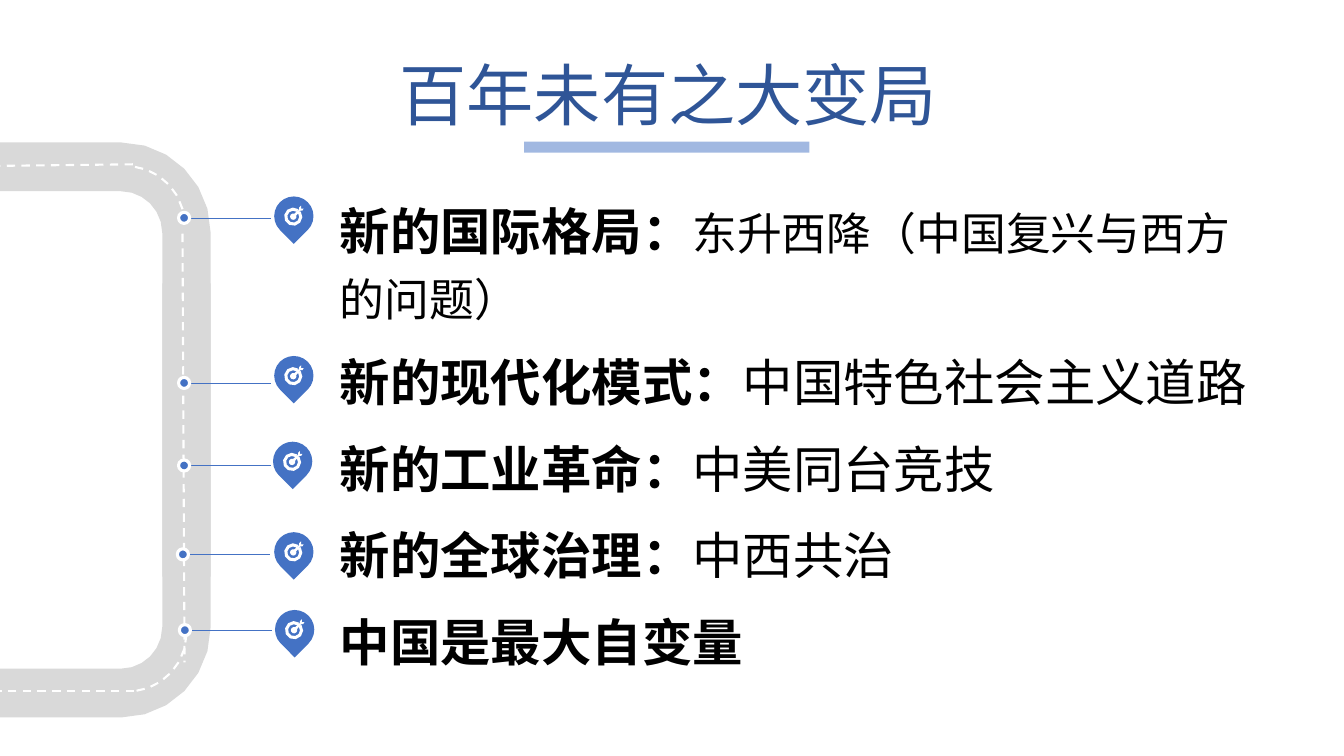
from math import cos, radians, sin

from lxml.etree import SubElement
from pptx import Presentation
from pptx.dml.color import RGBColor
from pptx.enum.dml import MSO_LINE
from pptx.enum.shapes import MSO_CONNECTOR, MSO_SHAPE
from pptx.enum.text import MSO_ANCHOR, PP_ALIGN
from pptx.oxml.ns import qn
from pptx.util import Cm, Pt

BLUE = RGBColor(0x44, 0x72, 0xC4)
NAVY = RGBColor(0x2F, 0x55, 0x97)
GREY = RGBColor(0xD9, 0xD9, 0xD9)
WHITE = RGBColor(0xFF, 0xFF, 0xFF)
BLACK = RGBColor(0x00, 0x00, 0x00)

TITLE = "百年未有之大变局"
POINTS = [
    [("新的国际格局：", 36, True), ("东升西降（中国复兴与西方的问题）", 32, False)],
    [("新的现代化模式：", 36, True), ("中国特色社会主义道路", 36, False)],
    [("新的工业革命：", 36, True), ("中美同台竞技", 36, False)],
    [("新的全球治理：", 36, True), ("中西共治", 36, False)],
    [("中国是最大自变量", 36, True)],
]
PINS = [(6.91, 4.95), (6.91, 8.97), (6.88, 11.13), (6.91, 13.41), (6.93, 15.37)]
STOPS = [(4.64, 5.49), (4.64, 9.65), (4.64, 11.73), (4.61, 13.97), (4.66, 15.88)]
ROAD_MIRROR = 21.67


def bezier(start, control_a, control_b, end, steps=6):
    """Return points along a cubic curve."""
    return [
        tuple(
            (1 - t) ** 3 * a + 3 * (1 - t) ** 2 * t * b + 3 * (1 - t) * t ** 2 * c + t ** 3 * d
            for a, b, c, d in zip(start, control_a, control_b, end)
        )
        for t in (step / steps for step in range(steps + 1))
    ]


def arc(center, radius, first, last, steps=9):
    """Return points along a circle between two angles in degrees."""
    angles = [radians(first + (last - first) * step / steps) for step in range(steps + 1)]
    return [(center[0] + radius * cos(a), center[1] - radius * sin(a)) for a in angles]


class RoadSlide:
    """Hold the style and the current slide, and draw elements in centimetres."""

    font = "Noto Sans CJK SC"

    def __init__(self, page):
        self.shapes = page.shapes

    def text(self, left, top, width, height, anchor):
        box = self.shapes.add_textbox(Cm(left), Cm(top), Cm(width), Cm(height))
        box.text_frame.word_wrap = True
        box.text_frame.vertical_anchor = anchor
        return box.text_frame

    def span(self, para, words, size, color, bold=False):
        span = para.add_run()
        span.text = words
        span.font.name = self.font
        span.font.size = Pt(size)
        span.font.bold = bold
        span.font.color.rgb = color
        for tag in ("a:ea", "a:cs"):
            SubElement(span.font._element, qn(tag)).set("typeface", self.font)

    def shape(self, kind, left, top, width, height, color):
        shape = self.shapes.add_shape(kind, Cm(left), Cm(top), Cm(width), Cm(height))
        shape.shadow.inherit = False
        shape.fill.solid()
        shape.fill.fore_color.rgb = color
        shape.line.fill.background()
        return shape

    def line(self, start, end, color, width, dash=None):
        line = self.shapes.add_connector(
            MSO_CONNECTOR.STRAIGHT, *(Cm(value) for value in (*start, *end))
        )
        line.line.color.rgb = color
        line.line.width = Pt(width)
        line.line.dash_style = dash
        SubElement(line._element.spPr, qn("a:effectLst"))

    def outline(self, contours, closed=True):
        contours = [[(Cm(x), Cm(y)) for x, y in contour] for contour in contours]
        builder = self.shapes.build_freeform(*contours[0][0])
        for number, contour in enumerate(contours):
            if number:
                builder.move_to(*contour[0])
            builder.add_line_segments(contour[1:], close=closed)
        shape = builder.convert_to_shape()
        shape.shadow.inherit = False
        return shape

    def area(self, contours, color):
        shape = self.outline(contours)
        shape.fill.solid()
        shape.fill.fore_color.rgb = color
        shape.line.fill.background()

    def dashed_curve(self, *controls):
        shape = self.outline([bezier(*controls)], closed=False)
        shape.fill.background()
        shape.line.color.rgb = WHITE
        shape.line.width = Pt(1.5)
        shape.line.dash_style = MSO_LINE.DASH

    def road(self):
        upper = [
            (-2.69, 3.59),
            *bezier((3.05, 3.59), (4.29, 3.59), (5.31, 4.6), (5.31, 5.87)),
            (5.31, 14.53),
            (4.09, 14.53),
            *bezier((4.09, 5.87), (4.09, 5.28), (3.61, 4.82), (3.05, 4.82)),
            (-2.69, 4.82),
        ]
        self.area([upper], GREY)
        self.area([[(x, ROAD_MIRROR - y) for x, y in upper]], GREY)
        self.dashed_curve((4.65, 5.64), (4.65, 4.88), (4.06, 4.27), (3.33, 4.19))
        self.dashed_curve((4.7, 15.98), (4.7, 16.71), (4.11, 17.35), (3.38, 17.42))
        for start, end in (
            ((3.35, 4.14), (-0.91, 4.19)),
            ((3.38, 17.42), (-0.03, 17.42)),
            ((4.6, 5.89), (4.65, 16.69)),
        ):
            self.line(start, end, WHITE, 1.5, MSO_LINE.DASH)

    def target(self, x, y):
        ring = arc((x, y), 0.23, 55, 395) + arc((x, y), 0.15, 395, 55)
        head = [(0.2, -0.2), (0.2, -0.28), (0.15, -0.23), (0.15, -0.18)]
        tail = [(0.18, -0.15), (0.23, -0.15), (0.26, -0.2)]
        dart = [(x + dx, y + dy) for dx, dy in head]
        dart += arc((x, y), 0.08, 70, 380)
        dart += [(x + dx, y + dy) for dx, dy in tail]
        self.area([ring, dart], WHITE)

    def marker(self, pin, stop):
        left, top = pin
        x, y = stop
        drop = self.shape(MSO_SHAPE.TEAR, left, top, 0.99, 0.99, BLUE)
        drop.rotation = 135
        self.target(left + 0.48, top + 0.51)
        self.line((x + 0.17, y), (x + 2.2, y), BLUE, 0.5)
        dot = self.shape(MSO_SHAPE.OVAL, x - 0.14, y - 0.14, 0.28, 0.28, BLUE)
        dot.line.color.rgb = WHITE
        dot.line.width = Pt(2.25)

    def title(self):
        para = self.text(2.24, 0.66, 29.21, 3.68, MSO_ANCHOR.MIDDLE).paragraphs[0]
        para.alignment = PP_ALIGN.CENTER
        para.line_spacing = 0.9
        self.span(para, TITLE, 48, NAVY)

    def underline(self):
        bar = self.shape(MSO_SHAPE.RECTANGLE, 13.21, 3.57, 7.19, 0.28, BLUE)
        color = bar.fill._xPr.find(qn("a:solidFill"))[0]
        SubElement(color, qn("a:alpha")).set("val", "50000")

    def points(self):
        frame = self.text(8.31, 4.62, 23.85, 13.44, MSO_ANCHOR.TOP)
        for number, spans in enumerate(POINTS):
            para = frame.add_paragraph() if number else frame.paragraphs[0]
            para.line_spacing = 1.2
            if number:
                para.space_before = Pt(10)
            for words, size, bold in spans:
                self.span(para, words, size, BLACK, bold)


def main():
    deck = Presentation()
    deck.slide_width, deck.slide_height = Cm(33.87), Cm(19.05)
    page = RoadSlide(deck.slides.add_slide(deck.slide_layouts[6]))
    page.title()
    page.points()
    page.road()
    for pin, stop in zip(PINS, STOPS):
        page.marker(pin, stop)
    page.underline()
    deck.save("out.pptx")


if __name__ == "__main__":
    main()
